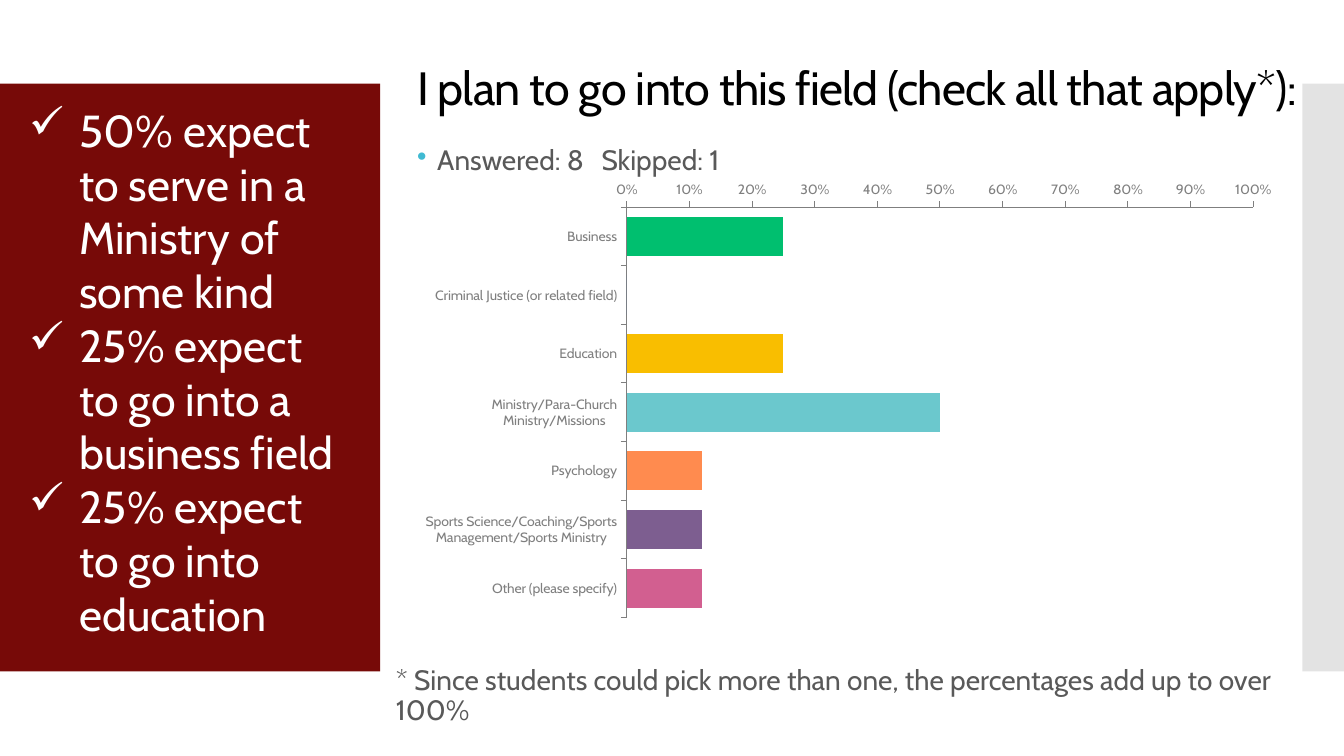
from lxml.etree import SubElement
from pptx import Presentation
from pptx.chart.data import CategoryChartData
from pptx.dml.color import RGBColor
from pptx.enum.chart import XL_AXIS_CROSSES as Crosses
from pptx.enum.chart import XL_CHART_TYPE as ChartType
from pptx.enum.chart import XL_TICK_LABEL_POSITION as LabelPosition
from pptx.enum.chart import XL_TICK_MARK as TickMark
from pptx.enum.shapes import MSO_SHAPE as Preset
from pptx.enum.text import MSO_ANCHOR as Anchor
from pptx.oxml.ns import qn
from pptx.util import Cm, Pt

FONT = "Cabin"
BODY = "595959"
AXIS = "7F7F7F"
FIELDS = [
    ("Business", 0.25, "00BF6F"),
    ("Criminal Justice (or related field)", 0, "507CB6"),
    ("Education", 0.25, "F9BE00"),
    ("Ministry/Para-Church Ministry/Missions", 0.5, "6BC8CD"),
    ("Psychology", 0.12, "FF8B4F"),
    ("Sports Science/Coaching/Sports Management/Sports Ministry", 0.12, "7D5E90"),
    ("Other (please specify)", 0.12, "D25F90"),
]
FINDINGS = [
    "50% expect to serve in a Ministry of some kind",
    "25% expect to go into a business field",
    "25% expect to go into education",
]


def color(hex_code):
    return RGBColor.from_string(hex_code)


def style_font(font, size, hex_code):
    font.name = FONT
    font.size = Pt(size)
    font.color.rgb = color(hex_code)


def add_panel(slide, place, hex_code, opacity=None):
    panel = slide.shapes.add_shape(Preset.RECTANGLE, *map(Cm, place))
    panel.shadow.inherit = False
    panel.fill.solid()
    panel.fill.fore_color.rgb = color(hex_code)
    panel.line.fill.background()
    if opacity is not None:
        tint = panel.fill._xPr.find(".//" + qn("a:srgbClr"))
        SubElement(tint, qn("a:alpha"), val=str(opacity * 1000))


def add_bullet(paragraph, mark, indent, hex_code):
    properties = paragraph._p.get_or_add_pPr()
    properties.set("marL", str(Cm(indent)))
    properties.set("indent", str(-Cm(indent)))
    tint = SubElement(properties, qn("a:buClr"))
    SubElement(tint, qn("a:srgbClr"), val=hex_code)
    SubElement(properties, qn("a:buChar"), char=mark)


def add_tab_stop(paragraph, position):
    stops = SubElement(paragraph._p.get_or_add_pPr(), qn("a:tabLst"))
    SubElement(stops, qn("a:tab"), pos=str(Cm(position)), algn="l")


def add_text(slide, place, lines, size, hex_code, line_spacing=None, space_before=None):
    frame = slide.shapes.add_textbox(*map(Cm, place)).text_frame
    frame.word_wrap = True
    for index, line in enumerate(lines):
        paragraph = frame.paragraphs[0] if index == 0 else frame.add_paragraph()
        if line_spacing:
            paragraph.line_spacing = line_spacing
        if space_before:
            paragraph.space_before = Pt(space_before)
        run = paragraph.add_run()
        run.text = line
        style_font(run.font, size, hex_code)
    return frame


def style_axis(axis):
    axis.has_major_gridlines = False
    axis.major_tick_mark = TickMark.OUTSIDE
    axis.minor_tick_mark = TickMark.NONE
    style_font(axis.tick_labels.font, 10, AXIS)
    axis.format.line.color.rgb = color(AXIS)
    axis.format.line.width = Pt(0.75)


def place_plot(chart, x, y, w, h):
    plot_area = chart._chartSpace.chart.plotArea
    layout = plot_area.find(qn("c:layout"))
    if layout is None:
        layout = SubElement(plot_area, qn("c:layout"))
        plot_area.insert(0, layout)
    manual = SubElement(layout, qn("c:manualLayout"))
    settings = {"layoutTarget": "inner", "xMode": "edge", "yMode": "edge",
                "x": x, "y": y, "w": w, "h": h}
    for tag, value in settings.items():
        SubElement(manual, qn("c:" + tag), val=str(value))


def add_field_chart(slide, place):
    answers = CategoryChartData()
    answers.categories = [name for name, _, _ in FIELDS]
    answers.add_series("Series 1", [share for _, share, _ in FIELDS])
    chart = slide.shapes.add_chart(
        ChartType.BAR_CLUSTERED, *map(Cm, place), answers).chart
    chart.has_legend = False
    chart.has_title = False
    style_font(chart.font, 18, "000000")

    bars = chart.plots[0]
    bars.vary_by_categories = False
    bars.gap_width = 50
    bars.overlap = 100
    series = bars.series[0]
    series.format.fill.solid()
    series.format.fill.fore_color.rgb = color(FIELDS[0][2])
    for index, (_, _, hex_code) in enumerate(FIELDS):
        fill = series.points[index].format.fill
        fill.solid()
        fill.fore_color.rgb = color(hex_code)

    field_axis = chart.category_axis
    style_axis(field_axis)
    field_axis.reverse_order = True
    field_axis.crosses = Crosses.MAXIMUM
    field_axis.tick_label_position = LabelPosition.LOW

    share_axis = chart.value_axis
    style_axis(share_axis)
    share_axis.minimum_scale = 0
    share_axis.maximum_scale = 1
    share_axis.major_unit = 0.1
    share_axis.tick_labels.number_format = "0%"
    share_axis.tick_labels.number_format_is_linked = False
    place_plot(chart, 0.25, 0.02, 0.71, 0.9)


def main():
    deck = Presentation()
    deck.slide_width, deck.slide_height = Cm(33.87), Cm(19.05)
    slide = deck.slides.add_slide(deck.slide_layouts[6])

    add_panel(slide, (0, 2.11, 9.58, 14.81), "770A08")
    add_panel(slide, (32.82, 2.11, 1.05, 14.81), "C8C8C8", opacity=50)

    findings = add_text(slide, (0.48, 2.46, 8.61, 13.94), FINDINGS, 32, "FFFFFF")
    for paragraph in findings.paragraphs:
        add_bullet(paragraph, "✓", 1.27, "FFFFFF")

    question = add_text(slide, (10.26, 1.52, 22.86, 1.52),
                        ["I plan to go into this field (check all that apply*):"],
                        33.3, "000000", line_spacing=0.9)
    question.vertical_anchor = Anchor.MIDDLE
    question.paragraphs[0].runs[0].font._element.set("spc", "-60")

    counts = add_text(slide, (10.26, 3.56, 22.23, 1.12),
                      ["Answered: 8\tSkipped: 1"], 20, BODY, 0.9, 12)
    add_bullet(counts.paragraphs[0], "•", 0.51, "40BAD2")
    add_tab_stop(counts.paragraphs[0], 4.65)

    add_field_chart(slide, (10.24, 4.57, 22.23, 11.91))
    add_text(slide, (9.73, 16.66, 23.39, 1.85),
             ["* Since students could pick more than one, "
              "the percentages add up to over 100%"], 20, BODY, 0.9, 12)
    deck.save("out.pptx")


if __name__ == "__main__":
    main()
